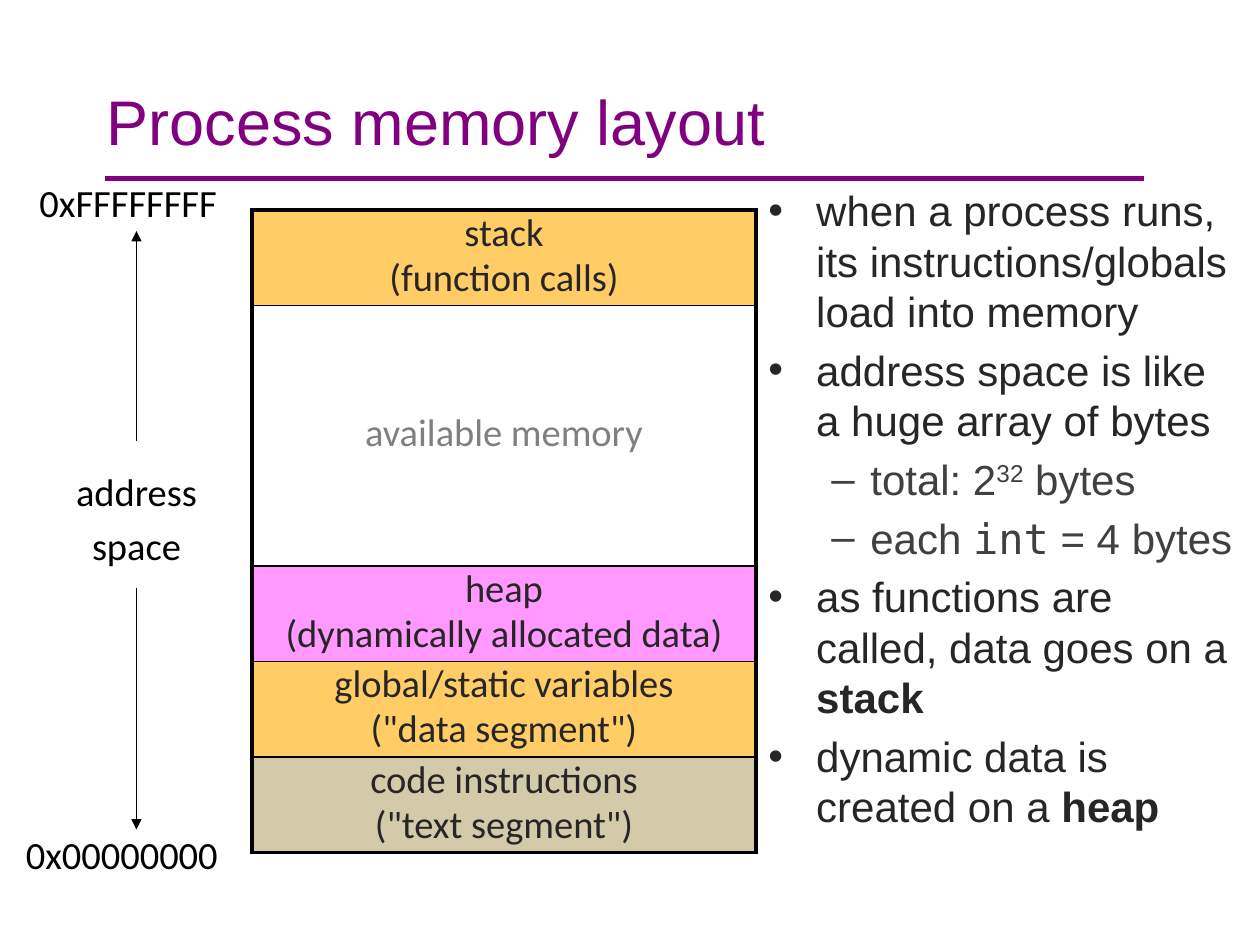
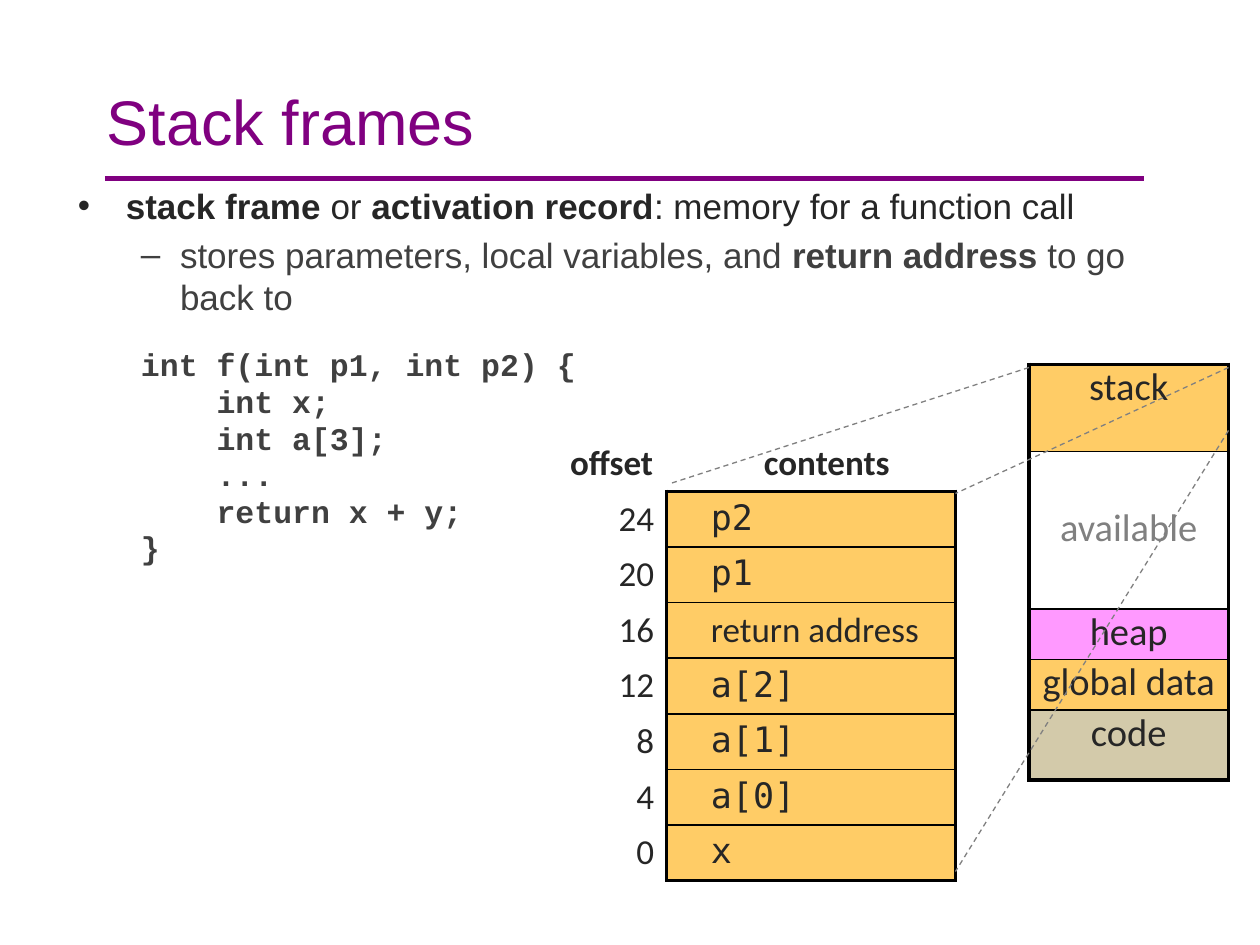
from dataclasses import dataclass

from lxml.etree import SubElement
from pptx import Presentation
from pptx.dml.color import RGBColor
from pptx.enum.dml import MSO_LINE
from pptx.enum.shapes import MSO_CONNECTOR
from pptx.enum.text import MSO_ANCHOR, PP_ALIGN
from pptx.oxml.ns import qn
from pptx.util import Inches, Pt


@dataclass(frozen=True)
class Theme:
    accent: str = "800080"
    ink: str = "262626"
    soft_ink: str = "404040"
    black: str = "000000"
    gray: str = "808080"
    orange: str = "FFCC66"
    pink: str = "FF99FF"
    tan: str = "D3CAAA"
    heading: str = "Arial"
    diagram: str = "Calibri"
    code: str = "Courier New"
    mono: str = "DejaVu Sans Mono"
    title_size: int = 36
    large: int = 24
    segment_size: int = 22
    medium: int = 20
    code_size: int = 18
    thick: float = 2.25
    thin: float = 1
    hair: float = 0.75
    tight: float = 0.8


T = Theme()
WIDTH, HEIGHT = 10, 7.5
COLUMNS = 120
UNIT = Inches(WIDTH) / COLUMNS
TITLE_BOX = (9, 4, 102, 15)
RULE = (10, 17, 109, 17)
LEVELS = [("•", 0.38, 0.38, T.ink), ("–", 0.81, 0.31, T.soft_ink)]
CODE_INDENT, CODE_STEP = 0.5, 0.6

MEMORY = {
    "title": "Process memory layout",
    "body": (72, 17, 47, 73),
    "size": T.large,
    "points": [
        (0, [("when a process runs, its instructions/globals load into memory", "")]),
        (0, [("address space is like a huge array of bytes", "")]),
        (1, [("total: 2", ""), ("32", "super"), (" bytes", "")]),
        (1, [("each ", ""), ("int", "mono"), (" = 4 bytes", "")]),
        (0, [("as functions are called, data goes on a ", ""), ("stack", "bold")]),
        (0, [("dynamic data is created on a ", ""), ("heap", "bold")]),
    ],
    "segments": (24, 20, 48, [
        (9.1, T.orange, ["stack", "(function calls)"]),
        (24.8, None, ["available memory"]),
        (9.1, T.pink, ["heap", "(dynamically allocated data)"]),
        (9.1, T.orange, ["global/static variables", '("data segment")']),
        (9.1, T.tan, ["code instructions", '("text segment")']),
    ]),
    "labels": [
        ((0.6, 78.6, 22, 5.6), ["0x00000000"]),
        ((1.2, 16.5, 22, 5.6), ["0xFFFFFFFF"]),
        ((2, 44, 22, 10), ["address", "space"]),
    ],
    "arrows": [(13, 42, 13, 22), (13, 56, 13, 79)],
}

FRAMES = {
    "title": "Stack frames",
    "body": (6.25, 17, 104.75, 73),
    "size": T.medium,
    "points": [
        (0, [("stack frame", "bold"), (" or ", ""), ("activation record", "bold"),
             (": memory for a function call", "")]),
        (1, [("stores parameters, local variables, and ", ""),
             ("return address", "bold"), (" to go back to", "")]),
    ],
    "code": [
        (0, "int f(int p1, int p2) {"),
        (1, "int x;"),
        (1, "int a[3];"),
        (1, "..."),
        (1, "return x + y;"),
        (0, "}"),
    ],
    "segments": (98, 34.7, 19, [
        (8.3, T.orange, ["stack"]),
        (15, None, ["available"]),
        (4.8, T.pink, ["heap"]),
        (4.8, T.orange, ["global data"]),
        (6.7, T.tan, ["code"]),
    ]),
    "frame_at": (53, 41.5),
    "frame_columns": (10.5, 27.5),
    "frame_row": 5.3,
    "frame_header": ("offset", "contents"),
    "frame_contents": ["p2", "p1", "return address", "a[2]", "a[1]", "a[0]", "x"],
    "word_bytes": 4,
    "zoom": [(98, 35, 64, 46), (117, 41, 91, 83), (117, 35, 91, 47)],
}


def grid(*lengths):
    return [round(length * UNIT) for length in lengths]


def add_run(paragraph, text, size, font, color, bold=False):
    run = paragraph.add_run()
    run.text = text
    run.font.size = Pt(size)
    run.font.name = font
    run.font.bold = bold
    run.font.color.rgb = RGBColor.from_string(color)
    return run


def next_paragraph(frame, size, spacing=None, align=None):
    first = frame.paragraphs[0]
    paragraph = frame.add_paragraph() if first.runs else first
    paragraph.space_before = Pt(size * 0.2)
    paragraph.line_spacing = spacing
    paragraph.alignment = align
    return paragraph


def set_indent(paragraph, left, hanging=0, bullet=None):
    props = paragraph._p.get_or_add_pPr()
    props.set("marL", str(Inches(left)))
    props.set("indent", str(-Inches(hanging)))
    if bullet:
        SubElement(props, qn("a:buFont")).set("typeface", T.heading)
        SubElement(props, qn("a:buChar")).set("char", bullet)


def add_text(slide, box, wrap=True, anchor=MSO_ANCHOR.TOP):
    frame = slide.shapes.add_textbox(*grid(*box)).text_frame
    frame.word_wrap = wrap
    frame.vertical_anchor = anchor
    return frame


def add_line(slide, ends, color, width, dash=None, arrow=False):
    line = slide.shapes.add_connector(MSO_CONNECTOR.STRAIGHT, *grid(*ends))
    line.line.color.rgb = RGBColor.from_string(color)
    line.line.width = Pt(width)
    if dash:
        line.line.dash_style = dash
    if arrow:
        SubElement(line.line._get_or_add_ln(), qn("a:tailEnd")).set("type", "triangle")
    SubElement(line._element.spPr, qn("a:effectLst"))


def style_cell(cell, fill=None, left=0, right=0, top=0, bottom=0):
    props = cell._tc.get_or_add_tcPr()
    for side, width in zip("LRTB", (left, right, top, bottom)):
        border = SubElement(props, qn(f"a:ln{side}"), w=str(Pt(width)))
        if width:
            paint = SubElement(border, qn("a:solidFill"))
            SubElement(paint, qn("a:srgbClr")).set("val", T.black)
        else:
            SubElement(border, qn("a:noFill"))
    if fill:
        cell.fill.solid()
        cell.fill.fore_color.rgb = RGBColor.from_string(fill)
    else:
        cell.fill.background()


def add_grid_table(slide, left, top, widths, heights):
    box = grid(left, top, sum(widths), sum(heights))
    table = slide.shapes.add_table(len(heights), len(widths), *box).table
    table.first_row = table.horz_banding = False
    for column, width in zip(table.columns, grid(*widths)):
        column.width = width
    for row, height in zip(table.rows, grid(*heights)):
        row.height = height
    return table


def edge(at_border):
    return T.thick if at_border else T.thin


def add_segments(slide, left, top, width, segments):
    table = add_grid_table(slide, left, top, [width], [s[0] for s in segments])
    for i, (_, fill, lines) in enumerate(segments):
        cell = table.cell(i, 0)
        style_cell(cell, fill, T.thick, T.thick, edge(i == 0), edge(i == len(segments) - 1))
        if not fill:
            cell.vertical_anchor = MSO_ANCHOR.MIDDLE
        for text in lines:
            paragraph = next_paragraph(cell.text_frame, T.segment_size, T.tight, PP_ALIGN.CENTER)
            add_run(paragraph, text, T.segment_size, T.diagram, T.ink if fill else T.gray)


def add_body(slide, content):
    frame, size = add_text(slide, content["body"]), content["size"]
    for level, runs in content["points"]:
        bullet, left, hanging, color = LEVELS[level]
        paragraph = next_paragraph(frame, size)
        set_indent(paragraph, left, hanging, bullet)
        for text, style in runs:
            font = T.mono if style == "mono" else T.heading
            run = add_run(paragraph, text, size, font, color, style == "bold")
            if style == "super":
                run.font._element.set("baseline", "30000")
    for i, (depth, text) in enumerate(content.get("code", [])):
        paragraph = next_paragraph(frame, T.code_size, T.tight)
        if i == 0:
            paragraph.space_before = Pt(T.medium)
        set_indent(paragraph, CODE_INDENT + depth * CODE_STEP)
        add_run(paragraph, text, T.code_size, T.code, T.soft_ink, bold=True)


def add_stack_frame(slide, content):
    contents = content["frame_contents"]
    count = len(contents)
    table = add_grid_table(slide, *content["frame_at"], content["frame_columns"],
                           [content["frame_row"]] * (count + 1))

    def write(row, column, text, align, font=T.diagram):
        paragraph = next_paragraph(table.cell(row, column).text_frame, T.medium, align=align)
        if column:
            set_indent(paragraph, 0.25)
        add_run(paragraph, text, T.medium, font, T.ink, bold=row == 0)

    for column, heading in enumerate(content["frame_header"]):
        style_cell(table.cell(0, column), bottom=T.thick * column)
        write(0, column, heading, PP_ALIGN.CENTER)
    for row, text in enumerate(contents, 1):
        style_cell(table.cell(row, 0), right=T.thick)
        write(row, 0, str((count - row) * content["word_bytes"]), PP_ALIGN.RIGHT)
        style_cell(table.cell(row, 1), T.orange, T.thick, T.thick,
                   edge(row == 1), edge(row == count))
        write(row, 1, text, PP_ALIGN.LEFT, T.diagram if " " in text else T.mono)


def add_base(deck, content):
    slide = deck.slides.add_slide(deck.slide_layouts[6])
    add_line(slide, RULE, T.accent, 3)
    title = add_text(slide, TITLE_BOX, anchor=MSO_ANCHOR.MIDDLE)
    add_run(title.paragraphs[0], content["title"], T.title_size, T.heading, T.accent)
    add_body(slide, content)
    add_segments(slide, *content["segments"])
    return slide


def build_memory(deck):
    slide = add_base(deck, MEMORY)
    for box, lines in MEMORY["labels"]:
        frame = add_text(slide, box, wrap=False)
        for text in lines:
            paragraph = next_paragraph(frame, T.segment_size, align=PP_ALIGN.CENTER)
            add_run(paragraph, text, T.segment_size, T.diagram, T.black)
    for ends in MEMORY["arrows"]:
        add_line(slide, ends, T.black, T.hair, arrow=True)


def build_frames(deck):
    slide = add_base(deck, FRAMES)
    add_stack_frame(slide, FRAMES)
    for ends in FRAMES["zoom"]:
        add_line(slide, ends, T.gray, T.hair, dash=MSO_LINE.DASH)


def main():
    deck = Presentation()
    deck.slide_width, deck.slide_height = Inches(WIDTH), Inches(HEIGHT)
    build_memory(deck)
    build_frames(deck)
    deck.save("out.pptx")


if __name__ == "__main__":
    main()
